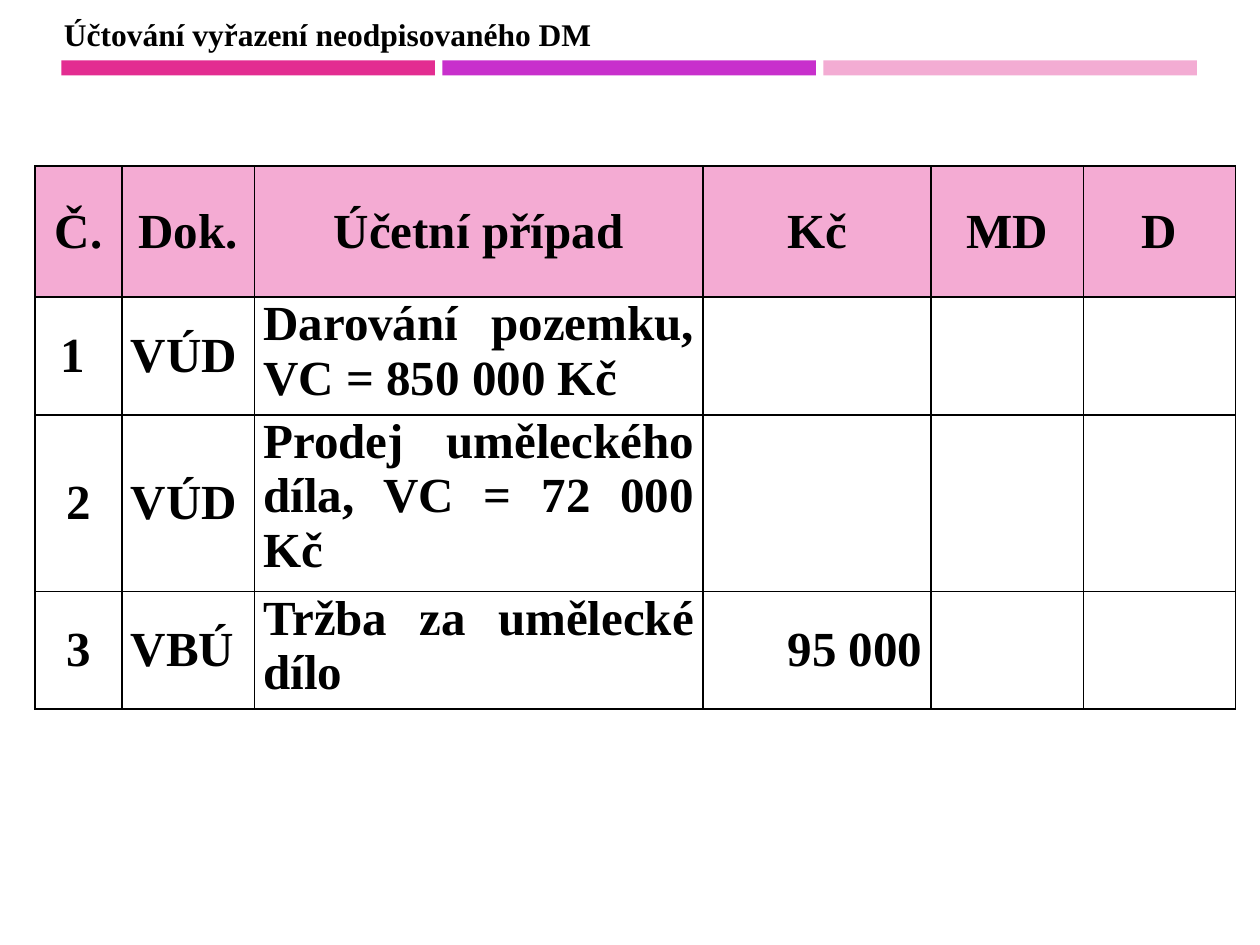
"""Build the slide on booking the disposal of non-depreciated fixed assets."""
from dataclasses import dataclass

from lxml import etree
from pptx import Presentation
from pptx.dml.color import RGBColor
from pptx.enum.shapes import MSO_SHAPE
from pptx.enum.text import MSO_ANCHOR, MSO_AUTO_SIZE, PP_ALIGN
from pptx.oxml.ns import qn
from pptx.util import Cm, Pt

RECTANGLE = MSO_SHAPE.RECTANGLE
TOP, MIDDLE = MSO_ANCHOR.TOP, MSO_ANCHOR.MIDDLE
LEFT, CENTER, RIGHT, JUSTIFY = PP_ALIGN.LEFT, PP_ALIGN.CENTER, PP_ALIGN.RIGHT, PP_ALIGN.JUSTIFY
FIT_SHAPE = MSO_AUTO_SIZE.SHAPE_TO_FIT_TEXT

BLACK = RGBColor(0x00, 0x00, 0x00)
HEADER_PINK = RGBColor(0xF4, 0xAB, 0xD3)
BAR_COLORS = (
    RGBColor(0xE3, 0x2D, 0x91),
    RGBColor(0xC8, 0x30, 0xCC),
    RGBColor(0xF3, 0xAC, 0xD3),
)
FONT = "Times New Roman"
BLANK_LAYOUT = 6


@dataclass(frozen=True)
class Column:
    title: str
    width: float
    align: PP_ALIGN
    anchor: MSO_ANCHOR = MIDDLE


@dataclass(frozen=True)
class Entry:
    height: float
    texts: tuple[str, ...]


COLUMNS = (
    Column("Č.", 1.75, CENTER),
    Column("Dok.", 2.67, LEFT),
    Column("Účetní případ", 9.04, JUSTIFY, TOP),
    Column("Kč", 4.6, RIGHT),
    Column("MD", 3.07, CENTER),
    Column("D", 3.07, CENTER),
)
HEADER = Entry(2.64, tuple(column.title for column in COLUMNS))
ENTRIES = (
    Entry(2.37, ("1 ", "VÚD", "Darování pozemku, VC = 850 000 Kč", "", "", "")),
    Entry(3.55, ("2", "VÚD", "Prodej uměleckého díla, VC = 72 000 Kč", "", "", "")),
    Entry(2.37, ("3", "VBÚ", "Tržba za umělecké dílo", "95 000", "", "")),
)


def style_text(paragraph, size: int) -> None:
    for span in paragraph.runs:
        span.font.name = FONT
        span.font.size = Pt(size)
        span.font.bold = True
        span.font.color.rgb = BLACK


def add_bars(page) -> None:
    for index, color in enumerate(BAR_COLORS):
        bar = page.shapes.add_shape(
            RECTANGLE, Cm(1.24 + 7.68 * index), Cm(1.22), Cm(7.53), Cm(0.3)
        )
        bar.shadow.inherit = False
        bar.fill.solid()
        bar.fill.fore_color.rgb = color
        bar.line.fill.background()


def add_title(page, text: str) -> None:
    box = page.shapes.add_textbox(Cm(1.04), Cm(0.18), Cm(11.25), Cm(1.02))
    box.text_frame.text = text
    box.text_frame.word_wrap = False
    box.text_frame.auto_size = FIT_SHAPE
    style_text(box.text_frame.paragraphs[0], 18)


def add_borders(cell) -> None:
    properties = cell._tc.get_or_add_tcPr()
    for side in ("a:lnL", "a:lnR", "a:lnT", "a:lnB"):
        line = etree.SubElement(properties, qn(side), w=str(Pt(1)))
        fill = etree.SubElement(line, qn("a:solidFill"))
        etree.SubElement(fill, qn("a:srgbClr"), val=str(BLACK))


def fill_cell(cell, text: str, column: Column, is_header: bool) -> None:
    add_borders(cell)
    cell.margin_left = cell.margin_right = Cm(0.18)
    cell.margin_top = cell.margin_bottom = Cm(0)
    cell.vertical_anchor = MIDDLE if is_header else column.anchor
    if is_header:
        cell.fill.solid()
        cell.fill.fore_color.rgb = HEADER_PINK
    else:
        cell.fill.background()
    if text:
        cell.text_frame.text = text
        para = cell.text_frame.paragraphs[0]
        para.alignment = CENTER if is_header else column.align
        style_text(para, 28)


def add_entry_table(page) -> None:
    entries = (HEADER, *ENTRIES)
    width = sum(column.width for column in COLUMNS)
    height = sum(entry.height for entry in entries)
    table = page.shapes.add_table(
        len(entries), len(COLUMNS), Cm(0.71), Cm(3.35), Cm(width), Cm(height)
    ).table
    table.first_row = table.horz_banding = False
    for index, column in enumerate(COLUMNS):
        table.columns[index].width = Cm(column.width)
    for row, entry in enumerate(entries):
        table.rows[row].height = Cm(entry.height)
        for index, (text, column) in enumerate(zip(entry.texts, COLUMNS)):
            fill_cell(table.cell(row, index), text, column, entry is HEADER)


def main() -> None:
    deck = Presentation()
    deck.slide_width, deck.slide_height = Cm(25.4), Cm(19.05)
    page = deck.slides.add_slide(deck.slide_layouts[BLANK_LAYOUT])
    add_bars(page)
    add_title(page, "Účtování vyřazení neodpisovaného DM")
    add_entry_table(page)
    deck.save("out.pptx")


if __name__ == "__main__":
    main()
